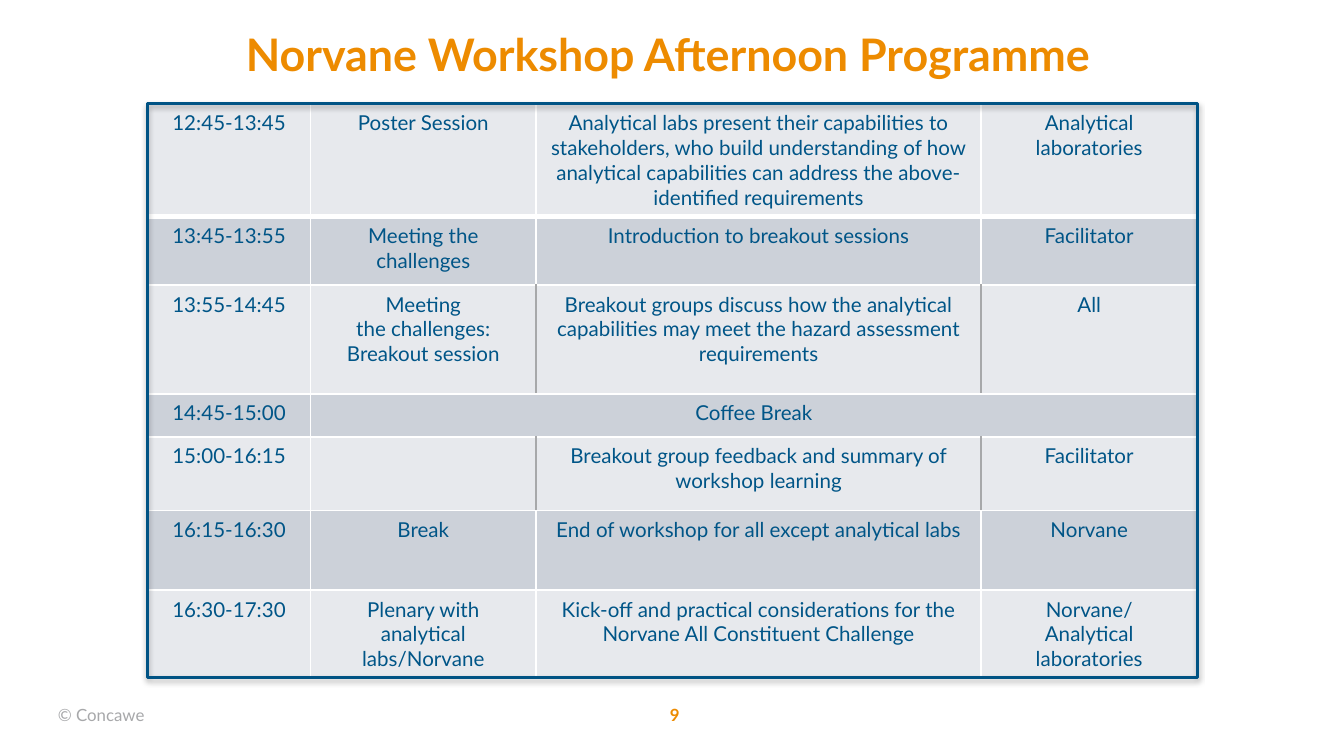
import pptx
import pptx.util
import pptx.oxml
import pptx.oxml.ns
import pptx.dml.color
import pptx.enum.text
import pptx.enum.shapes

Inches = pptx.util.Inches
RGBColor = pptx.dml.color.RGBColor
ALIGN = pptx.enum.text.PP_ALIGN
ANCHOR = pptx.enum.text.MSO_ANCHOR

ORANGE = RGBColor(0xED, 0x8B, 0x00)
NAVY = RGBColor(0x00, 0x55, 0x87)
EDGE = RGBColor(0x00, 0x53, 0x84)
GREY = RGBColor(0xA7, 0xA8, 0xAA)
WHITE = RGBColor(0xFF, 0xFF, 0xFF)
LIGHT = RGBColor(0xE7, 0xE9, 0xED)
DARK = RGBColor(0xCC, 0xD1, 0xD9)

COLS = [1.21, 1.68, 3.31, 1.61]
ROWS = [0.84, 0.51, 0.81, 0.32, 0.55, 0.59, 0.65]
BREAK_ROW = 3
RULED = (2, 4)
PLAN = [
    ("12:45-13:45", "Poster Session",
     "Analytical labs present their capabilities to\nstakeholders, who build understanding of how "
     "analytical capabilities can address the above-identified requirements",
     "Analytical\nlaboratories"),
    ("13:45-13:55", "Meeting the\nchallenges", "Introduction to breakout sessions", "Facilitator"),
    ("13:55-14:45", "Meeting\nthe challenges:\nBreakout session",
     "Breakout groups discuss how the analytical\n"
     "capabilities may meet the hazard assessment requirements", "All"),
    ("14:45-15:00", "Coffee Break", "", ""),
    ("15:00-16:15", "", "Breakout group feedback and summary of workshop learning", "Facilitator"),
    ("16:15-16:30", "Break", "End of workshop for all except analytical labs", "Norvane"),
    ("16:30-17:30", "Plenary with\nanalytical\nlabs/Norvane",
     "Kick-off and practical considerations for the Norvane All Constituent Challenge",
     "Norvane/\nAnalytical\nlaboratories"),
]


def write(frame, text, size=11, color=NAVY, bold=False, align=ALIGN.CENTER):
    """Fill a text frame with one paragraph per line of text."""
    for i, line in enumerate(text.split("\n")):
        para = frame.paragraphs[0] if i == 0 else frame.add_paragraph()
        para.alignment = align
        para.font.size = pptx.util.Pt(size)
        if not line:
            continue
        run = para.add_run()
        run.text = line
        run.font.name = "Lato"
        run.font.size = pptx.util.Pt(size)
        run.font.bold = bold
        run.font.color.rgb = color


def inset(frame, right, base, anchor):
    """Set the insets, wrap and anchor of a text frame."""
    frame.margin_left = frame.margin_top = 0
    frame.margin_right, frame.margin_bottom = Inches(right), Inches(base)
    frame.word_wrap = True
    frame.auto_size = pptx.enum.text.MSO_AUTO_SIZE.NONE
    frame.vertical_anchor = anchor


def add_title(slide, x, y, w, h):
    """Place the slide title in its box."""
    title = slide.shapes.title
    title.left, title.top, title.width, title.height = map(Inches, (x, y, w, h))
    inset(title.text_frame, 0.1, 0.05, ANCHOR.TOP)
    write(title.text_frame, "Norvane Workshop Afternoon Programme", size=24, color=ORANGE, bold=True)


def add_foot(slide, x, y, w, h):
    """Place the copyright line and page number in the foot box."""
    note = slide.shapes.add_textbox(Inches(x), Inches(y), Inches(0.88), Inches(h))
    inset(note.text_frame, 0.1, 0.05, ANCHOR.MIDDLE)
    write(note.text_frame, "© Concawe", size=9, color=GREY, align=ALIGN.LEFT)
    wide = 0.39
    page = slide.shapes.add_textbox(Inches(x + (w - wide) / 2), Inches(y), Inches(wide), Inches(0.15))
    inset(page.text_frame, 0, 0, ANCHOR.MIDDLE)
    write(page.text_frame, "9", size=9, color=ORANGE, bold=True)


def rule(cell, side, color=WHITE, width=1):
    """Draw one border of a cell."""
    cell._tc.get_or_add_tcPr().append(pptx.oxml.parse_xml(
        f'<a:ln{side} {pptx.oxml.ns.nsdecls("a")} w="{pptx.util.Pt(width)}">'
        f'<a:solidFill><a:srgbClr val="{color}"/></a:solidFill></a:ln{side}>'))


def add_plan(slide, x, y, w, h):
    """Place the programme table and the frame around it."""
    box = [Inches(v) for v in (x, y, w, h)]
    table = slide.shapes.add_table(len(ROWS), len(COLS), *box).table
    table.first_row = table.horz_banding = False
    for col, wide in zip(table.columns, COLS):
        col.width = Inches(wide)
    for row, high in zip(table.rows, ROWS):
        row.height = Inches(high)
    table.cell(BREAK_ROW, 1).merge(table.cell(BREAK_ROW, 3))
    for r, line in enumerate(PLAN):
        for c, text in enumerate(line):
            cell = table.cell(r, c)
            rule(cell, "L", GREY if r in RULED and c > 1 else WHITE)
            rule(cell, "R", GREY if r in RULED and c in (1, 2) else WHITE)
            rule(cell, "T", width=3 if r == 1 else 1)
            rule(cell, "B", width=3 if r == 0 else 1)
            cell.fill.solid()
            cell.fill.fore_color.rgb = DARK if r % 2 else LIGHT
            write(cell.text_frame, text)
    frame = slide.shapes.add_shape(pptx.enum.shapes.MSO_SHAPE.RECTANGLE, *box)
    frame.fill.background()
    frame.line.color.rgb = EDGE
    frame.line.width = pptx.util.Pt(1.5)
    frame.shadow.inherit = False
    glow = frame._element.spPr.find(pptx.oxml.ns.qn("a:effectLst"))
    glow.append(pptx.oxml.parse_xml(
        f'<a:outerShdw {pptx.oxml.ns.nsdecls("a")} blurRad="{pptx.util.Pt(3.1)}" '
        f'dist="{pptx.util.Pt(1.8)}" dir="5400000" rotWithShape="0">'
        '<a:srgbClr val="000000"><a:alpha val="35000"/></a:srgbClr></a:outerShdw>'))


def main():
    """Build and save the slide."""
    deck = pptx.Presentation()
    deck.slide_width = Inches(10)
    deck.slide_height = deck.slide_width * 9 // 16
    slide = deck.slides.add_slide(deck.slide_layouts[5])
    add_foot(slide, 0.43, 5.24, 9.18, 0.2)
    add_title(slide, 0.43, 0.2, 9.18, 0.59)
    add_plan(slide, 1.1, 0.77, 7.81, 4.27)
    deck.save("out.pptx")


if __name__ == "__main__":
    main()
